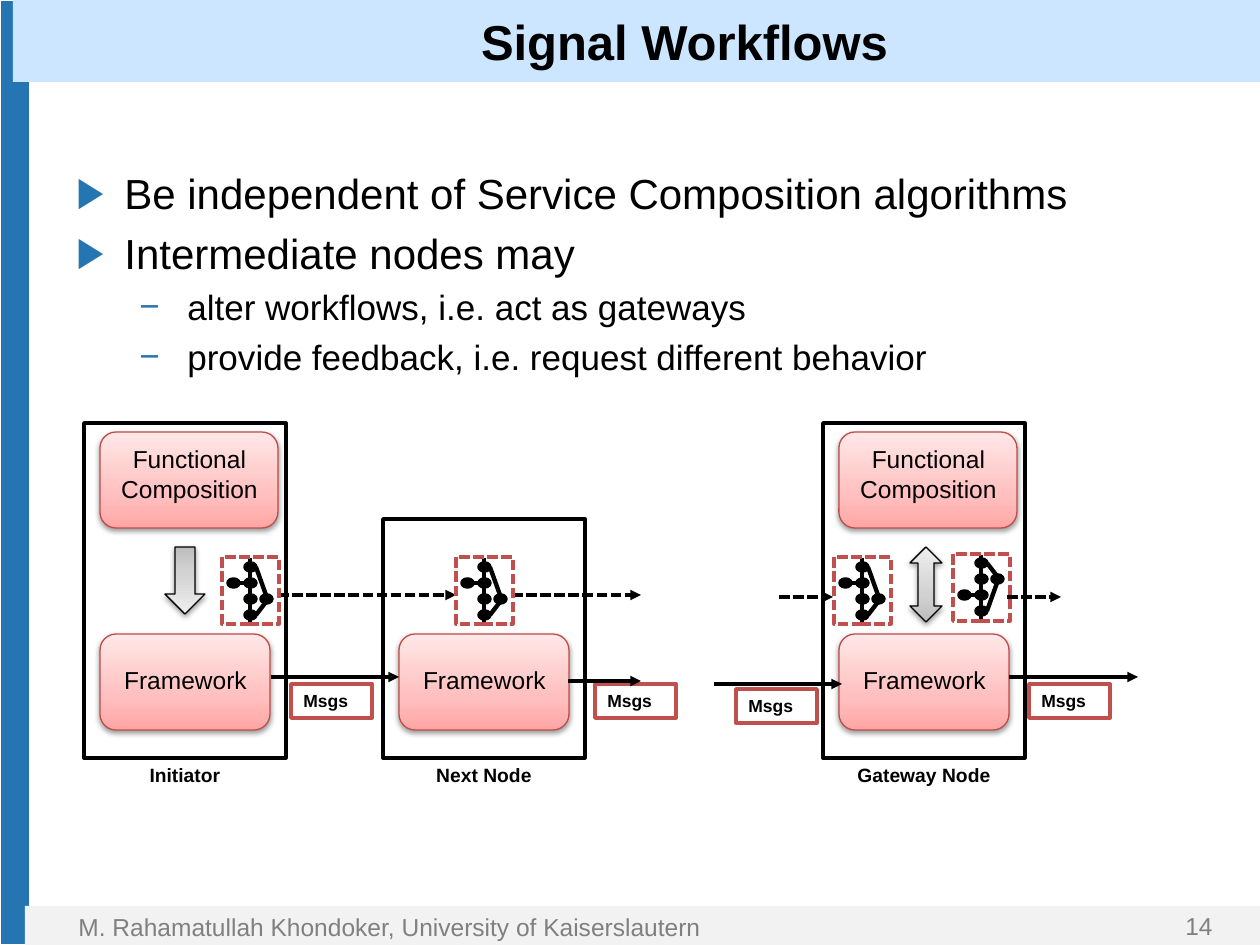
import pptx
import pptx.dml.color
import pptx.enum.dml
import pptx.enum.shapes
import pptx.enum.text
import pptx.oxml
import pptx.oxml.ns
import pptx.util
from lxml import etree

RGB = pptx.dml.color.RGBColor
SHAPE = pptx.enum.shapes.MSO_SHAPE
ALIGN = pptx.enum.text.PP_ALIGN
ANCHOR = pptx.enum.text.MSO_ANCHOR
qn = pptx.oxml.ns.qn

EMU_PER_PX = 914400 / 126
BLACK = RGB(0x00, 0x00, 0x00)
WHITE = RGB(0xFF, 0xFF, 0xFF)
BLUE = RGB(0x24, 0x75, 0xB2)
PALE_BLUE = RGB(0xCC, 0xE6, 0xFF)
PALE_GREY = RGB(0xF2, 0xF2, 0xF2)
GREY = RGB(0x80, 0x80, 0x80)
RED = RGB(0xC0, 0x50, 0x4D)
DARK_RED = RGB(0xBF, 0x4C, 0x48)
RED_STOPS = (RGB(0xFF, 0xA6, 0xA5), RGB(0xFF, 0xC0, 0xBF), RGB(0xFF, 0xE7, 0xE7))
GREY_STOPS = (RGB(0xBD, 0xBD, 0xBD), RGB(0xD1, 0xD1, 0xD1), RGB(0xEE, 0xEE, 0xEE))


def px(*lengths):
    return [pptx.util.Emu(round(v * EMU_PER_PX)) for v in lengths]


def add_xml(parent, tag, **attrs):
    return etree.SubElement(parent, qn(tag), {k: str(v) for k, v in attrs.items()})


def write(p, text, size=14, color=BLACK, bold=False, align=ALIGN.LEFT, before=0):
    p.alignment = align
    if before:
        p.space_before = pptx.util.Pt(before)
    r = p.add_run()
    r.text = text
    r.font.name = "Arial"
    r.font.size = pptx.util.Pt(size)
    r.font.bold = bold
    r.font.color.rgb = color


class Deck:
    font_sizes = {"bullet": 24, "dash": 20}

    def __init__(self):
        self.prs = pptx.Presentation()
        self.prs.slide_width, self.prs.slide_height = px(1260, 945)
        self.slide = self.prs.slides.add_slide(self.prs.slide_layouts[6])
        self.shapes = self.slide.shapes

    def side_bar(self, x, y, w, h, color):
        table = self.shapes.add_table(1, 1, *px(x, y, w, h)).table
        fill = table.cell(0, 0).fill
        fill.solid()
        fill.fore_color.rgb = color

    def shape(self, kind, x, y, w, h, fill=None, line=None, width=2, dashed=False):
        s = self.shapes.add_shape(kind, *px(x, y, w, h))
        s.shadow.inherit = False
        if fill is None:
            s.fill.background()
        else:
            s.fill.solid()
            s.fill.fore_color.rgb = fill
        if line is None:
            s.line.fill.background()
        else:
            self.stroke(s.line, line, width, dashed)
        return s

    def stroke(self, line, color, width, dashed):
        line.color.rgb = color
        line.width = pptx.util.Pt(width)
        if dashed:
            line.dash_style = pptx.enum.dml.MSO_LINE.SQUARE_DOT

    def raised(self, kind, x, y, w, h, stops, line, angle=90):
        """Shape with a three-stop gradient and a soft shadow below."""
        s = self.shape(kind, x, y, w, h, WHITE, line, 0.75)
        s.fill.gradient()
        s.fill.gradient_angle = angle
        spPr = s._element.spPr
        stop_list = spPr.find(qn("a:gradFill")).find(qn("a:gsLst"))
        for old in list(stop_list):
            stop_list.remove(old)
        for pos, color in zip((0, 35000, 100000), stops):
            add_xml(add_xml(stop_list, "a:gs", pos=pos), "a:srgbClr", val=color)
        shadow = add_xml(spPr.find(qn("a:effectLst")), "a:outerShdw", blurRad=40000,
                         dist=20000, dir=5400000, rotWithShape=0)
        add_xml(add_xml(shadow, "a:srgbClr", val=BLACK), "a:alpha", val=38000)

    def text(self, x, y, w, h, text, anchor=ANCHOR.TOP, **fmt):
        tf = self.shapes.add_textbox(*px(x, y, w, h)).text_frame
        tf.word_wrap = True
        tf.vertical_anchor = anchor
        for i, row in enumerate(text.split("\n")):
            write(tf.add_paragraph() if i else tf.paragraphs[0], row, **fmt)

    def bullets(self, x, y, w, h, items):
        tf = self.shapes.add_textbox(*px(x, y, w, h)).text_frame
        tf.word_wrap = True
        for i, (level, text) in enumerate(items):
            p = tf.add_paragraph() if i else tf.paragraphs[0]
            p.level = level
            pPr = p._p.get_or_add_pPr()
            margin, hang = px(48 + 63 * level, -48)
            pPr.set("marL", str(margin))
            pPr.set("indent", str(hang))
            add_xml(add_xml(pPr, "a:buClr"), "a:srgbClr", val=BLUE)
            add_xml(pPr, "a:buFont", typeface="Arial")
            add_xml(pPr, "a:buChar", char="▶−"[level])
            size = (24, 20)[level]
            write(p, text, size=size, before=size * 0.23 if i else 0)

    def line(self, x1, y1, x2, y2, width=2, dashed=False, arrow=False):
        s = self.shapes.add_connector(
            pptx.enum.shapes.MSO_CONNECTOR.STRAIGHT, *px(x1, y1, x2, y2))
        self.stroke(s.line, BLACK, width, dashed)
        if arrow:
            add_xml(s.line._get_or_add_ln(), "a:tailEnd", type="triangle")
        add_xml(s._element.spPr, "a:effectLst")

    def node(self, x, y, name, composes):
        self.shape(SHAPE.RECTANGLE, x, y, 202, 758 - y, WHITE, BLACK)
        self.text(x, 757, 202, 45, name, size=11, bold=True, align=ALIGN.CENTER)
        if composes:
            self.component(x + 16, 432, 178, "Functional\nComposition", 438)
        self.component(x + 16, 634, 170, "Framework", 659)

    def component(self, x, y, w, text, text_y):
        self.raised(SHAPE.ROUNDED_RECTANGLE, x, y, w, 96, RED_STOPS, DARK_RED)
        self.text(x, text_y, w + 1, 72, text, align=ALIGN.CENTER)

    def workflow(self, x, y, flipped=False):
        """Small graph in a dashed frame, upside down if flipped."""
        w, h = 57, 67

        def at(dy):
            return y + (h - dy if flipped else dy)

        for cx, cy in ((28, 10), (28, 26), (11, 26), (28, 42), (28, 58), (44, 42)):
            self.shape(SHAPE.OVAL, x + cx - 5, at(cy) - 4, 11, 8, BLACK, BLACK)
        for x1, y1, x2, y2 in ((28, 1, 28, 66), (16, 26, 23, 26),
                               (34, 58, 44, 45), (44, 38, 34, 10)):
            self.line(x + x1, at(y1), x + x2, at(y2), width=2.5)
        self.shape(SHAPE.RECTANGLE, x, y, w, h, line=RED, dashed=True)

    def message(self, x, y):
        s = self.shape(SHAPE.RECTANGLE, x, y, 81, 34, WHITE, RED)
        s.text_frame.vertical_anchor = ANCHOR.TOP
        write(s.text_frame.paragraphs[0], "Msgs", size=10, bold=True)


def main():
    deck = Deck()
    deck.side_bar(0, 0, 25, 945, BLUE)
    deck.shape(SHAPE.RECTANGLE, 13, 0, 1247, 82, PALE_BLUE)
    deck.shape(SHAPE.RECTANGLE, 25, 906, 1235, 39, PALE_GREY)
    deck.text(1038, 906, 187, 39, "14", ANCHOR.MIDDLE, color=GREY, align=ALIGN.RIGHT)
    deck.text(66, 906, 748, 43, "M. Rahamatullah Khondoker, University of Kaiserslautern",
              color=GREY)
    deck.text(144, 0, 1081, 82, "Signal Workflows", ANCHOR.MIDDLE,
              size=28, bold=True, align=ALIGN.CENTER)
    deck.bullets(64, 161, 1160, 708, (
        (0, "Be independent of Service Composition algorithms"),
        (0, "Intermediate nodes may"),
        (1, "alter workflows, i.e. act as gateways"),
        (1, "provide feedback, i.e. request different behavior"),
    ))

    for x, y, name, composes in ((383, 519, "Next Node", False),
                                 (84, 423, "Initiator", True),
                                 (823, 423, "Gateway Node", True)):
        deck.node(x, y, name, composes)
    deck.raised(SHAPE.DOWN_ARROW, 165, 547, 40, 67, GREY_STOPS, BLACK, angle=270)
    deck.raised(SHAPE.UP_DOWN_ARROW, 910, 547, 32, 75, GREY_STOPS, BLACK)

    for x, y in ((291, 684), (595, 684), (736, 689), (1029, 684)):
        deck.message(x, y)
    for x1, x2, y in ((271, 399, 677), (568, 641, 681), (714, 842, 684), (1009, 1138, 677)):
        deck.line(x1, y, x2, y, arrow=True)
    for x1, x2, y in ((278, 456, 595), (512, 641, 595), (779, 833, 597), (1007, 1061, 597)):
        deck.line(x1, y, x2, y, dashed=True, arrow=True)
    for x in (222, 456, 834):
        deck.workflow(x, 557)
    deck.workflow(953, 554, flipped=True)

    deck.prs.save("out.pptx")


if __name__ == "__main__":
    main()
